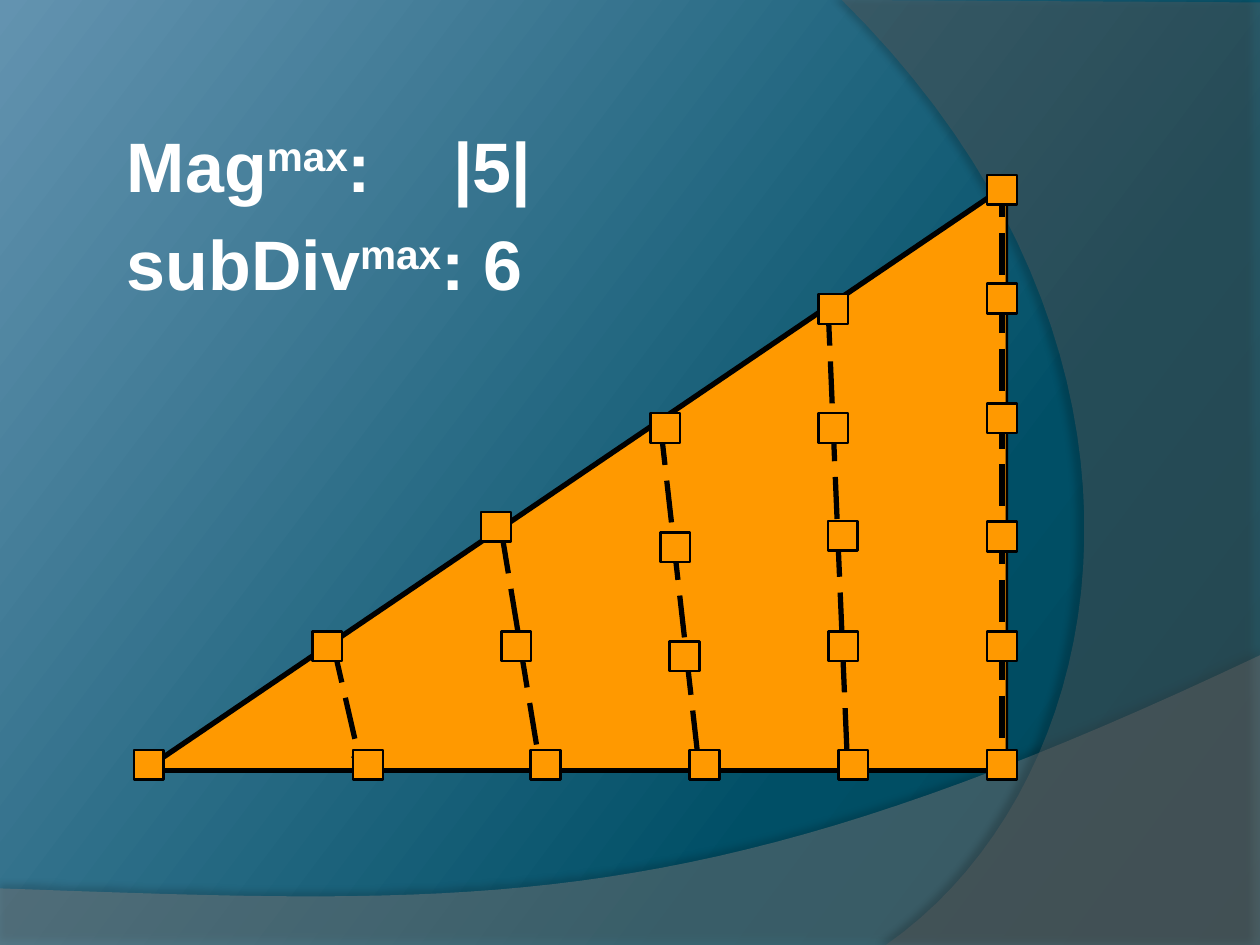
import pptx
import pptx.util
import pptx.dml.color
import pptx.enum.dml
import pptx.enum.shapes
import pptx.enum.text
import lxml.etree
from pptx.oxml.ns import qn

Cm, Pt = pptx.util.Cm, pptx.util.Pt
RGB = pptx.dml.color.RGBColor
SHAPE = pptx.enum.shapes.MSO_SHAPE
ORANGE = RGB(0xFF, 0x99, 0x00)
BLACK = RGB(0, 0, 0)
WHITE = RGB(0xFF, 0xFF, 0xFF)
GREY = RGB(0x7F, 0x7F, 0x7F)
DARK = RGB(0x5E, 0x5E, 0x5E)
STOPS = [(0, RGB(0x00, 0x43, 0x55)), (30, RGB(0x00, 0x4F, 0x66)),
         (100, RGB(0x63, 0x93, 0xB0))]

WIDE, HIGH = 25.4, 19.05
SIDE = 0.6
BASE = 15.42
LEFT, RIGHT, TOP, FLOOR = 2.9, 20.3, 3.73, 15.53

WAVES = [
    dict(start=[(0, 17.91), (0, HIGH), (WIDE, HIGH), (WIDE, 13.21)],
         curve=[(14.2, 18.52), (9.93, 18.26), (0, 17.91)],
         color=GREY, alpha=45, shade=(35, 4, 3.5, 270)),
    dict(start=[(WIDE, 0.05), (WIDE, HIGH), (17.86, HIGH)],
         curve=[(22.63, 15.72), (24.05, 6.99), (16.97, 0)],
         color=DARK, alpha=40, shade=(45, 4, 4, 180)),
]
LABELS = [("|5|", 8.89, 2.34, 2.59), ("Mag^max^:", 2.31, 2.34, 7.8),
          ("subDiv^max^: 6", 2.31, 4.32, 21.41)]
EDGES = [((LEFT, FLOOR), (RIGHT, TOP)), ((LEFT, FLOOR), (RIGHT, FLOOR))]
COLUMNS = [
    dict(dash=((20.2, 3.53), (20.2, 15.72)), joined=True,
         knots=[(20.2, y) for y in (3.83, 6.02, 8.43, 10.82, 13.03, BASE)]),
    dict(dash=((16.69, 6.12), (17.09, FLOOR)),
         knots=[(16.8, 6.23), (16.8, 8.63), (16.99, 10.8), (17, 13.03), (17.2, BASE)]),
    dict(dash=((13.31, 8.53), (14.1, FLOOR)),
         knots=[(13.41, 8.63), (13.61, 11.03), (13.8, 13.23), (14.2, BASE)]),
    dict(dash=((10.11, 10.72), (10.9, FLOOR)),
         knots=[(10, 10.62), (10.41, 13.03), (11, BASE)]),
    dict(dash=((6.7, 12.93), (7.3, FLOOR)), knots=[(6.6, 13.03), (7.42, BASE)]),
    dict(knots=[(3, BASE)]),
]


def add(parent, tag, **attrs):
    node = lxml.etree.SubElement(parent, qn(tag))
    for key, value in attrs.items():
        node.set(key, str(value))
    return node


def paint_back(slide):
    fill = slide.background.fill
    fill.gradient()
    grad = slide.background._cSld.find(".//" + qn("a:gradFill"))
    for child in list(grad):
        grad.remove(child)
    stops = add(grad, "a:gsLst")
    for pos, color in STOPS:
        add(add(stops, "a:gs", pos=pos * 1000), "a:srgbClr", val=color)
    add(grad, "a:lin", ang=217 * 60000, scaled=0)


def bend(start, one, two, end, steps=40):
    for i in range(1, steps + 1):
        t = i / steps
        u = 1 - t
        yield tuple(u**3 * a + 3 * u * u * t * b + 3 * u * t * t * c + t**3 * d
                    for a, b, c, d in zip(start, one, two, end))


def add_wave(slide, start, curve, color, alpha, shade):
    points = [(Cm(x), Cm(y)) for x, y in start + list(bend(start[-1], *curve))]
    pen = slide.shapes.build_freeform(*points[0])
    pen.add_line_segments(points[1:], close=True)
    wave = pen.convert_to_shape()
    wave.fill.solid()
    wave.fill.fore_color.rgb = color
    wave.line.fill.background()
    wave.shadow.inherit = False
    props = wave._element.spPr
    add(props.find(".//" + qn("a:solidFill") + "/" + qn("a:srgbClr")),
        "a:alpha", val=alpha * 1000)
    dim, blur, dist, angle = shade
    cast = add(props.find(qn("a:effectLst")), "a:outerShdw", blurRad=Pt(blur),
               dist=Pt(dist), dir=angle * 60000, algn="ctr", rotWithShape=0)
    add(add(cast, "a:srgbClr", val=BLACK), "a:alpha", val=dim * 1000)


def add_block(slide, kind, x, y, w, h):
    block = slide.shapes.add_shape(kind, Cm(x), Cm(y), Cm(w), Cm(h))
    block.shadow.inherit = False
    block.fill.solid()
    block.fill.fore_color.rgb = ORANGE
    block.line.color.rgb = BLACK
    block.line.width = Pt(1.5)
    return block


def add_line(slide, start, end, dash=None):
    line = slide.shapes.add_connector(
        pptx.enum.shapes.MSO_CONNECTOR.STRAIGHT, *map(Cm, start + end))
    line.line.color.rgb = BLACK
    line.line.width = Pt(3)
    if dash:
        line.line.dash_style = dash
    props = line._element.spPr
    add(props.find(qn("a:ln")), "a:tailEnd", type="triangle")
    add(props, "a:effectLst")
    return line


def add_text(slide, text, x, y, w, h=1.96, size=40, color=WHITE, font="Arial"):
    frame = slide.shapes.add_textbox(Cm(x), Cm(y), Cm(w), Cm(h)).text_frame
    frame.word_wrap = True
    frame.auto_size = pptx.enum.text.MSO_AUTO_SIZE.SHAPE_TO_FIT_TEXT
    for i, part in enumerate(text.split("^")):
        run = frame.paragraphs[0].add_run()
        run.text = part
        run.font.name = font
        run.font.size = Pt(size)
        run.font.bold = True
        run.font.color.rgb = color
        if i % 2:
            run._r.get_or_add_rPr().set("baseline", "30000")


def main():
    deck = pptx.Presentation()
    deck.slide_width, deck.slide_height = Cm(WIDE), Cm(HIGH)
    slide = deck.slides.add_slide(deck.slide_layouts[6])
    paint_back(slide)
    for wave in WAVES:
        add_wave(slide, **wave)
    wedge = add_block(slide, SHAPE.RIGHT_TRIANGLE, LEFT, TOP, RIGHT - LEFT, FLOOR - TOP)
    wedge._element.spPr.find(qn("a:xfrm")).set("flipH", "1")
    for start, end in EDGES:
        add_line(slide, start, end)
    for column in COLUMNS:
        if "dash" in column:
            line = add_line(slide, *column["dash"],
                            dash=pptx.enum.dml.MSO_LINE.LONG_DASH)
        knots = [add_block(slide, SHAPE.RECTANGLE, x - SIDE / 2, y - SIDE / 2, SIDE, SIDE)
                 for x, y in column["knots"]]
        if column.get("joined"):
            line.begin_connect(knots[0], 0)
            line.end_connect(knots[-1], 2)
    for label in LABELS:
        add_text(slide, *label)
    deck.save("out.pptx")


if __name__ == "__main__":
    main()
